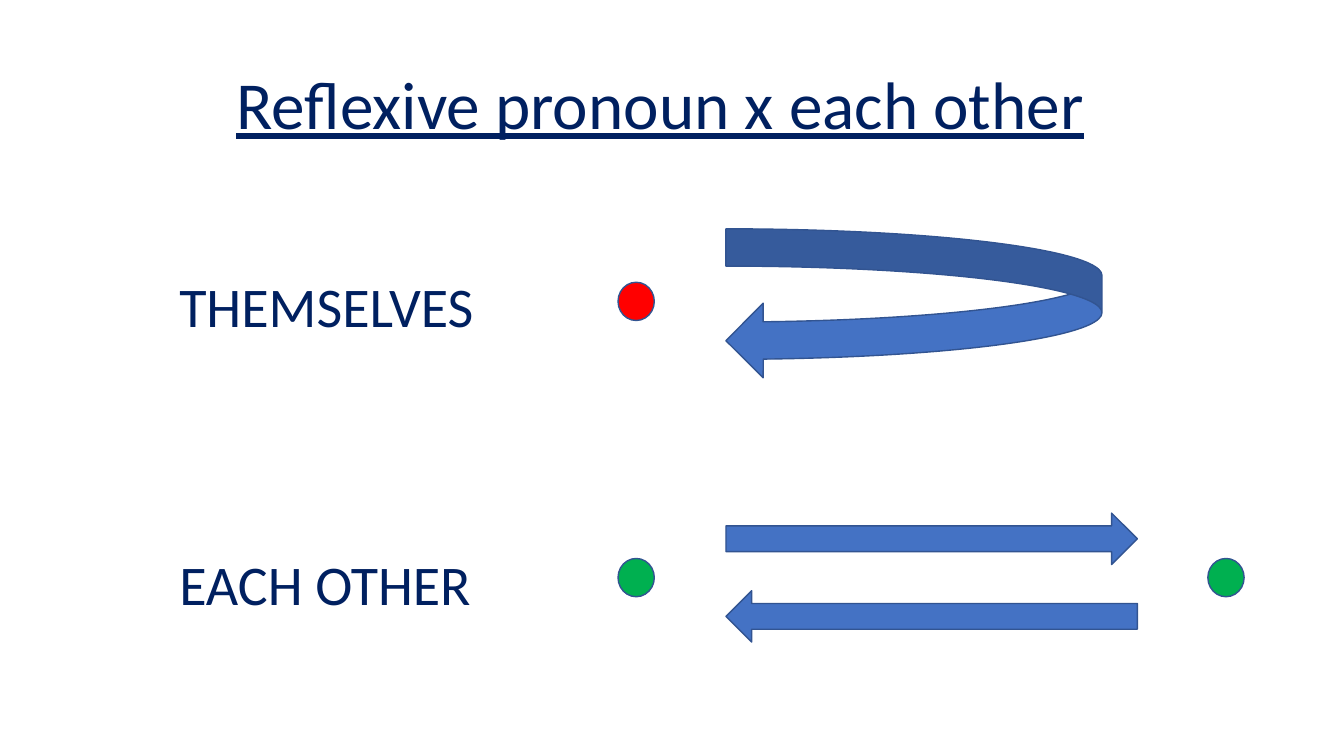
from pptx import Presentation
from pptx.dml.color import RGBColor
from pptx.enum.shapes import MSO_SHAPE as Preset
from pptx.enum.text import MSO_ANCHOR as Anchor, PP_ALIGN as Align
from pptx.util import Inches, Pt

NAVY, BLUE, RED, GREEN, OUTLINE = "002060", "4472C4", "FF0000", "00B050", "325491"


def color(hex_code):
    return RGBColor.from_string(hex_code)


def add_text(words, left, top, width, height, size):
    frame = slide.shapes.add_textbox(
        Inches(left), Inches(top), Inches(width), Inches(height)).text_frame
    frame.word_wrap = True
    run = frame.paragraphs[0].add_run()
    run.text = words
    run.font.name = "Calibri"
    run.font.size = Pt(size)
    run.font.color.rgb = color(NAVY)
    return frame


deck = Presentation()
deck.slide_width, deck.slide_height = Inches(13.33), Inches(7.5)
slide = deck.slides.add_slide(deck.slide_layouts[6])

title = add_text("Reflexive pronoun x each other", 1.83, 0.44, 9.44, 1.25, 48)
title.vertical_anchor = Anchor.MIDDLE
heading = title.paragraphs[0]
heading.alignment = Align.CENTER
heading.line_spacing = 0.9
heading.runs[0].font.underline = True

for pronoun, top in [("THEMSELVES", 2.64), ("EACH OTHER", 5.4)]:
    add_text(pronoun, 1.68, top, 4, 0.78, 40)

dot = (0.36, 0.38)
straight = (4.08, 0.51)
for preset, left, top, (width, height), fill in [
    (Preset.OVAL, 6.13, 2.8, dot, RED),
    (Preset.CURVED_LEFT_ARROW, 7.2, 2.27, (3.73, 1.48), BLUE),
    (Preset.RIGHT_ARROW, 7.2, 5.09, straight, BLUE),
    (Preset.LEFT_ARROW, 7.2, 5.86, straight, BLUE),
    (Preset.OVAL, 6.13, 5.54, dot, GREEN),
    (Preset.OVAL, 11.98, 5.54, dot, GREEN),
]:
    symbol = slide.shapes.add_shape(
        preset, Inches(left), Inches(top), Inches(width), Inches(height))
    symbol.shadow.inherit = False
    symbol.fill.solid()
    symbol.fill.fore_color.rgb = color(fill)
    symbol.line.color.rgb = color(OUTLINE)
    symbol.line.width = Pt(1)

deck.save("out.pptx")
